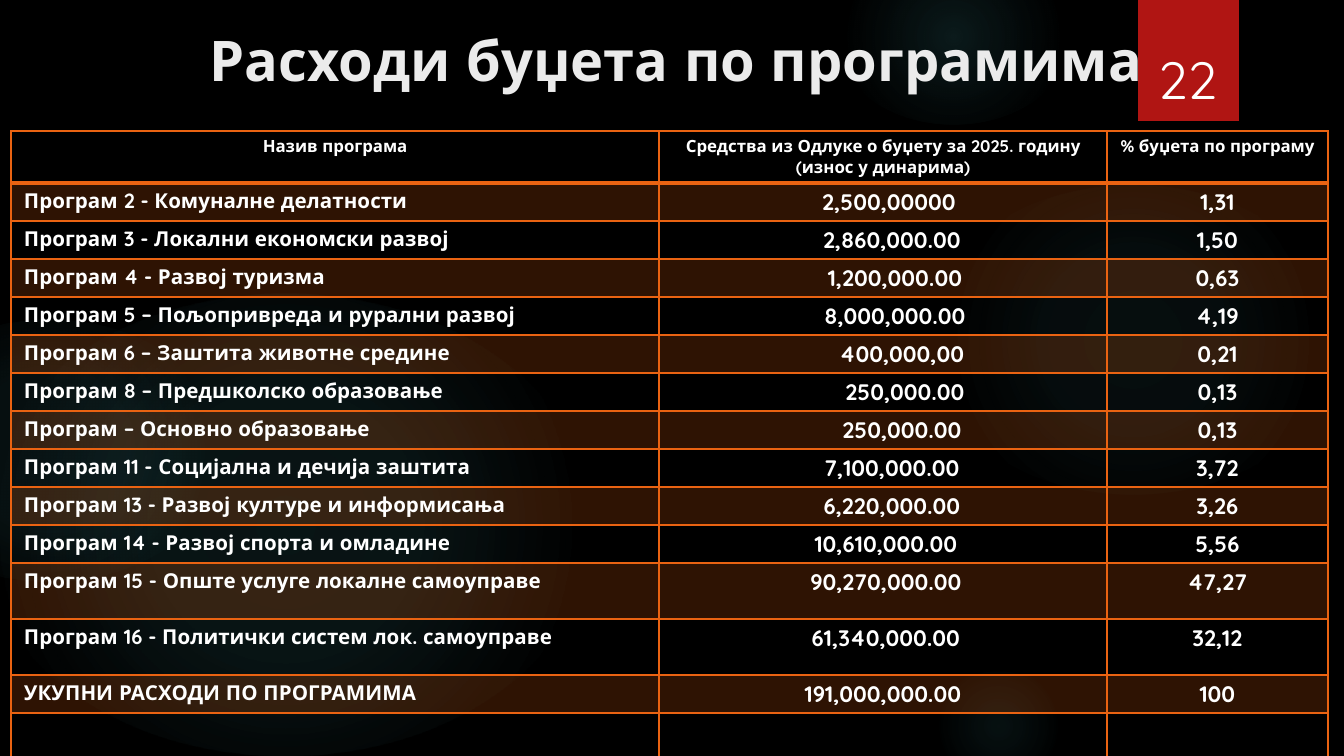
from lxml.etree import SubElement
from pptx import Presentation
from pptx.dml.color import RGBColor
from pptx.enum.shapes import MSO_SHAPE
from pptx.enum.text import MSO_ANCHOR, PP_ALIGN
from pptx.oxml.ns import qn
from pptx.util import Pt

# Content
TITLE = "Расходи буџета по програмима"
PAGE_NUMBER = "22"
HEADINGS = (
    "Назив програма",
    "Средства из Одлуке о буџету за 2025. годину (износ у динарима)",
    "% буџета по програму",
)
# Program, amount, share of the budget, indent of the amount in px
PROGRAMS = [
    ("Програм 2 - Комуналне делатности", "2,500,00000", "1,31", 12),
    ("Програм 3 - Локални економски развој", "2,860,000.00", "1,50", 18),
    ("Програм 4 - Развој туризма", "1,200,000.00", "0,63", 24),
    ("Програм 5 – Пољопривреда и рурални развој", "8,000,000.00", "4,19", 24),
    ("Програм 6 – Заштита животне средине", "400,000,00", "0,21", 38),
    ("Програм 8 – Предшколско образовање", "250,000.00", "0,13", 44),
    ("Програм – Основно образовање", "250,000.00", "0,13", 38),
    ("Програм 11 - Социјална и дечија заштита", "7,100,000.00", "3,72", 18),
    ("Програм 13 - Развој културе и информисања", "6,220,000.00", "3,26", 18),
    ("Програм 14 - Развој спорта и омладине", "10,610,000.00", "5,56", 6),
    ("Програм 15 - Опште услуге локалне самоуправе", "90,270,000.00", "47,27", 6),
    ("Програм 16 - Политички систем лок. самоуправе", "61,340,000.00", "32,12", 6),
    ("УКУПНИ РАСХОДИ ПО ПРОГРАМИМА", "191,000,000.00", "100", 0),
]

# Look
FONT = "Quicksand"
COLORS = {"background": "000000", "glow": "50B9C1", "tab": "B01513",
          "title": "EBEBEB", "text": "FFFFFF", "accent": "EA6312"}
# Box in px, then gradient stops as (position %, opacity %)
GLOWS = [
    ((926, 185, 414, 310), ((0, 7), (36, 6), (69, 0))),
    ((836, -51, 235, 176), ((0, 14), (36, 7), (73, 0))),
    ((926, 672, 145, 109), ((0, 9), (36, 5), (66, 0))),
    ((-23, 294, 616, 462), ((0, 11), (36, 10), (75, 0))),
    ((-124, 320, 347, 261), ((0, 8), (36, 8), (72, 0))),
]
COLUMN_WIDTHS = (648, 448, 221)
ROW_HEIGHTS = [52] + [38] * 10 + [56, 56, 38, 54]
BAND_OPACITY = 20
EMU_PER_PX = 914400 / 134.4


def px(*lengths):
    return [round(length * EMU_PER_PX) for length in lengths]


def rgb(name):
    return RGBColor.from_string(COLORS[name])


def write(frame, text, size, color="text", bold=False, align=PP_ALIGN.LEFT):
    frame.text = text
    paragraph = frame.paragraphs[0]
    paragraph.alignment = align
    font = paragraph.font
    font.name, font.size, font.bold = FONT, Pt(size), bold
    font.color.rgb = rgb(color)
    return paragraph


def add_color(parent, name, opacity=100):
    color = SubElement(parent, qn("a:srgbClr"), val=COLORS[name])
    SubElement(color, qn("a:alpha"), val=str(opacity * 1000))


def add_glow(box, stops):
    glow = slide.shapes.add_shape(MSO_SHAPE.OVAL, *px(*box))
    glow.shadow.inherit = False
    glow.line.fill.background()
    glow.fill.gradient()
    gradient = glow._element.spPr.find(qn("a:gradFill"))
    for child in list(gradient):
        gradient.remove(child)
    stop_list = SubElement(gradient, qn("a:gsLst"))
    for position, opacity in stops:
        stop = SubElement(stop_list, qn("a:gs"), pos=str(position * 1000))
        add_color(stop, "glow", opacity)
    radial = SubElement(gradient, qn("a:path"), path="circle")
    SubElement(radial, qn("a:fillToRect"),
               {side: "50000" for side in "ltrb"})


def format_cell(cell, row):
    cell.margin_left, cell.margin_right = px(13, 13)
    cell.margin_top, cell.margin_bottom = px(5, 5)
    properties = cell._tc.get_or_add_tcPr()
    for side in "LRTB":
        under_header = (row, side) in ((0, "B"), (1, "T"))
        line = SubElement(properties, qn(f"a:ln{side}"),
                          w=str(Pt(2 if under_header else 1)))
        add_color(SubElement(line, qn("a:solidFill")), "accent")
    # Odd program rows carry a translucent band
    if row % 2 and row <= len(PROGRAMS):
        cell.fill.solid()
        cell.fill.fore_color.rgb = rgb("accent")
        band = properties.find(qn("a:solidFill"))[0]
        SubElement(band, qn("a:alpha"), val=str(BAND_OPACITY * 1000))
    else:
        cell.fill.background()


prs = Presentation()
prs.slide_width, prs.slide_height = px(1344, 756)
slide = prs.slides.add_slide(prs.slide_layouts[5])
slide.background.fill.solid()
slide.background.fill.fore_color.rgb = rgb("background")

# Backdrop
for box, stops in GLOWS:
    add_glow(box, stops)
tab = slide.shapes.add_shape(MSO_SHAPE.RECTANGLE, *px(1138, 0, 101, 121))
tab.shadow.inherit = False
tab.fill.solid()
tab.fill.fore_color.rgb = rgb("tab")
tab.line.fill.background()

# Title, brought in front of the backdrop
title = slide.shapes.title
title.left, title.top, title.width, title.height = px(196, 16, 1145, 86)
title.text_frame.vertical_anchor = MSO_ANCHOR.MIDDLE
write(title.text_frame, TITLE, 30, "title", bold=True)
slide.shapes._spTree.append(title._element)

# Page number
number = slide.shapes.add_textbox(*px(1141, 32, 93, 85)).text_frame
number.word_wrap = True
number.vertical_anchor = MSO_ANCHOR.BOTTOM
write(number, PAGE_NUMBER, 28, align=PP_ALIGN.CENTER)

# Budget table, with an empty last row
budget = slide.shapes.add_table(
    len(ROW_HEIGHTS), len(COLUMN_WIDTHS),
    *px(11, 131, sum(COLUMN_WIDTHS), sum(ROW_HEIGHTS))).table
budget.first_row = budget.horz_banding = False
for column, width in zip(budget.columns, px(*COLUMN_WIDTHS)):
    column.width = width
for row, height in enumerate(px(*ROW_HEIGHTS)):
    budget.rows[row].height = height
    for cell in budget.rows[row].cells:
        format_cell(cell, row)

for column, heading in enumerate(HEADINGS):
    write(budget.cell(0, column).text_frame, heading, 9, bold=True,
          align=PP_ALIGN.CENTER)
for row, (program, amount, share, indent) in enumerate(PROGRAMS, start=1):
    write(budget.cell(row, 0).text_frame, program, 11, bold=True)
    sum_line = write(budget.cell(row, 1).text_frame, amount, 12, bold=True,
                     align=PP_ALIGN.CENTER)
    sum_line._p.get_or_add_pPr().set("marL", str(px(indent)[0]))
    write(budget.cell(row, 2).text_frame, share, 12, bold=True,
          align=PP_ALIGN.CENTER)

prs.save("out.pptx")
